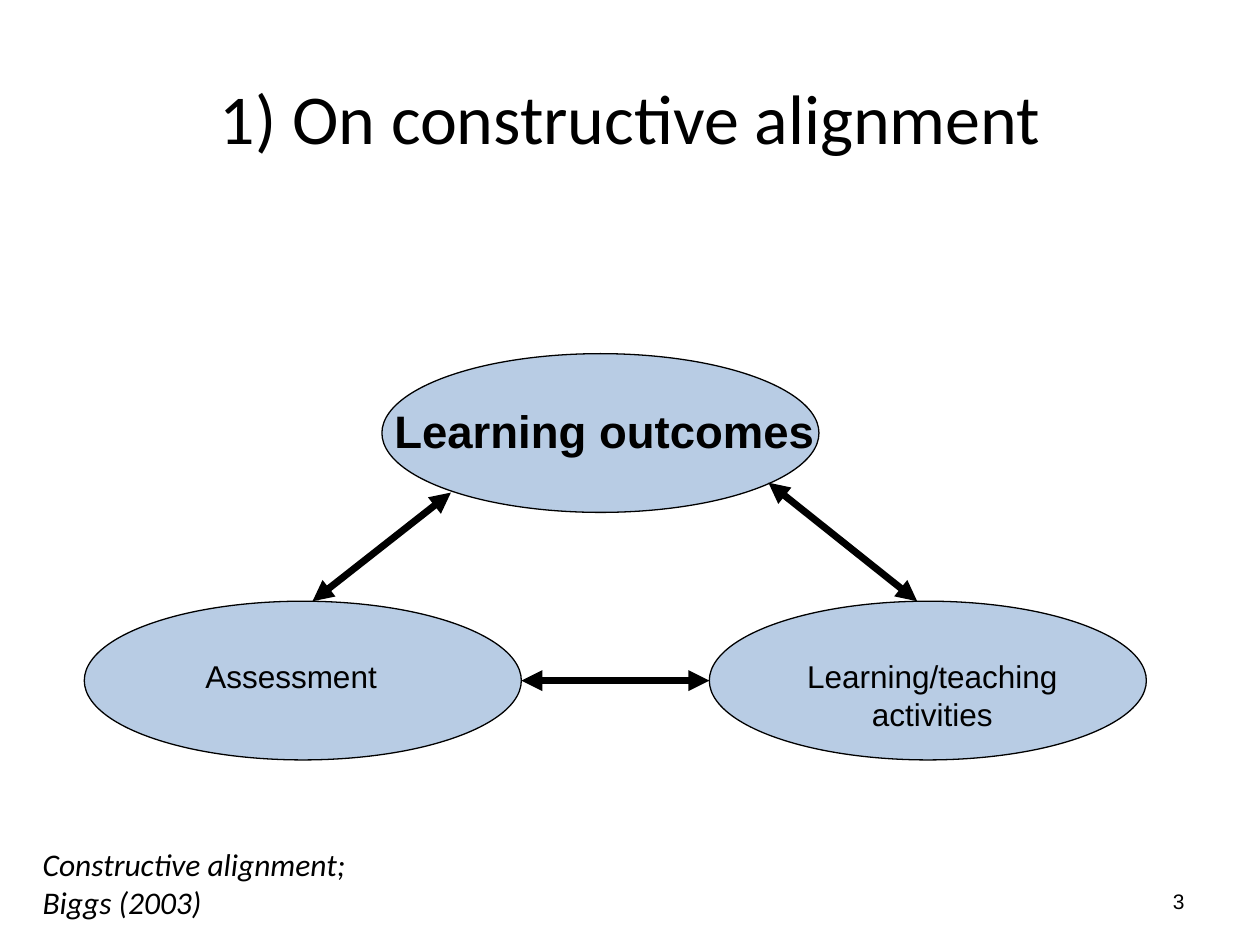
from lxml import etree
from pptx import Presentation
from pptx.dml.color import RGBColor
from pptx.enum.shapes import MSO_CONNECTOR, MSO_SHAPE
from pptx.enum.text import MSO_ANCHOR, PP_ALIGN
from pptx.oxml.ns import qn
from pptx.util import Cm, Pt

OVAL, STRAIGHT = MSO_SHAPE.OVAL, MSO_CONNECTOR.STRAIGHT
LEFT, CENTER, RIGHT = PP_ALIGN.LEFT, PP_ALIGN.CENTER, PP_ALIGN.RIGHT
TOP, MIDDLE = MSO_ANCHOR.TOP, MSO_ANCHOR.MIDDLE
COLORS = {"ink": "000000", "oval": "4F81BD"}
OVAL_W, OVAL_H = 8.81, 3.2


def rgb(name):
    """Return the named palette colour."""
    return RGBColor.from_string(COLORS[name])


def place(sp, left, top, width, height):
    """Position a shape, in centimetres."""
    sp.left, sp.top, sp.width, sp.height = map(Cm, (left, top, width, height))


def write(sp, lines, size, font="Arial", align=LEFT, anchor=TOP, bold=False, italic=False):
    """Fill a shape with one formatted paragraph per line."""
    tf = sp.text_frame
    tf.word_wrap = True
    tf.vertical_anchor = anchor
    for i, line in enumerate(lines):
        p = tf.add_paragraph() if i else tf.paragraphs[0]
        p.alignment = align
        r = p.add_run()
        r.text = line
        r.font.name, r.font.size = font, Pt(size)
        r.font.bold, r.font.italic = bold, italic
        r.font.color.rgb = rgb("ink")


def add_text(shapes, box, lines, size, **style):
    """Add a text box."""
    write(shapes.add_textbox(*map(Cm, box)), lines, size, **style)


def add_node(shapes, left, top, label_box, label, size, **style):
    """Add a translucent oval grouped with its label."""
    group = shapes.add_group_shape().shapes
    sp = group.add_shape(OVAL, *map(Cm, (left, top, OVAL_W, OVAL_H)))
    sp.shadow.inherit = False
    sp.fill.solid()
    sp.fill.fore_color.rgb = rgb("oval")
    color = sp.fill._xPr.find(qn("a:solidFill"))[0]
    etree.SubElement(color, qn("a:alpha"), val="40000")
    sp.line.color.rgb = rgb("ink")
    sp.line.width = Pt(0.75)
    add_text(group, label_box, [label], size, **style)


def add_double_arrow(shapes, start, end):
    """Add a thick line with an arrowhead at both ends."""
    cxn = shapes.add_connector(STRAIGHT, *map(Cm, start + end))
    cxn.line.color.rgb = rgb("ink")
    cxn.line.width = Pt(4)
    ln = cxn.line._get_or_add_ln()
    for tag in ("a:headEnd", "a:tailEnd"):
        etree.SubElement(ln, qn(tag), type="triangle")
    etree.SubElement(ln.getparent(), qn("a:effectLst"))


def main():
    """Build the slide on constructive alignment."""
    prs = Presentation()
    prs.slide_width, prs.slide_height = Cm(25.4), Cm(19.05)
    s = prs.slides.add_slide(prs.slide_layouts[5])
    shapes = s.shapes
    title = shapes.title
    place(title, 1.27, 0.76, 22.86, 3.18)
    write(title, ["1) On constructive alignment"], 40, "Calibri", CENTER, MIDDLE)

    outcomes, assessment, activities = (7.7, 7.13), (1.7, 12.12), (14.3, 12.12)
    add_node(shapes, *outcomes, (7.7, 8, 9.8, 1.37), "Learning outcomes", 26, bold=True)
    add_node(shapes, *assessment, (3.89, 13.13, 4.19, 1.02), "Assessment", 18)
    add_node(shapes, *activities, (15.9, 13.13, 5.79, 1.8),
             "Learning/teaching activities", 18, align=CENTER)

    base_y = assessment[1] + OVAL_H / 2
    add_double_arrow(shapes, (assessment[0] + OVAL_W, base_y), (activities[0], base_y))
    add_double_arrow(shapes, (6.3, assessment[1]), (9.09, 9.93))
    add_double_arrow(shapes, (15.49, 9.73), (18.49, activities[1]))

    add_text(shapes, (0.61, 16.92, 7.09, 1.8),
             ["Constructive alignment;", "Biggs (2003)"], 18, font="Calibri", italic=True)
    add_text(shapes, (18.21, 17.65, 5.92, 1.02), ["3"], 12, align=RIGHT, anchor=MIDDLE)
    prs.save("out.pptx")


if __name__ == "__main__":
    main()
